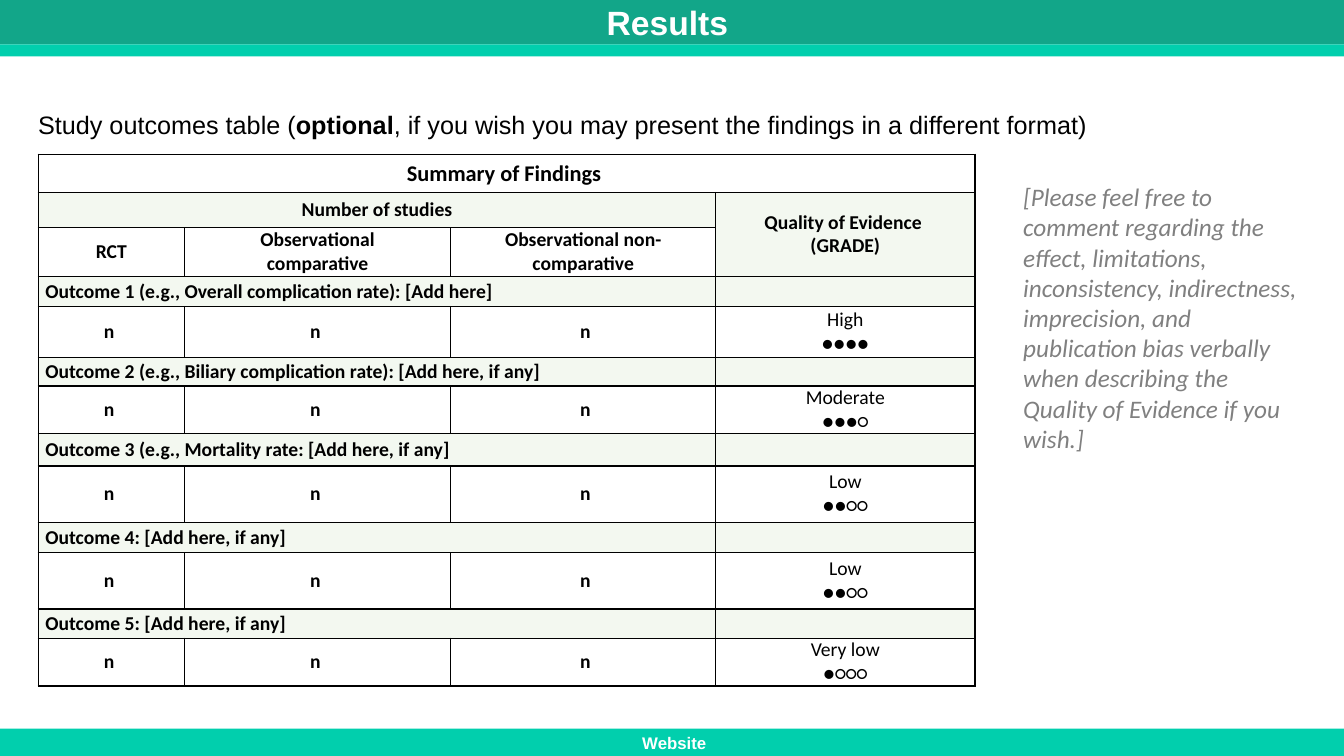
from lxml import etree
from pptx import Presentation, util as u
from pptx.dml.color import RGBColor
from pptx.enum import shapes, text
from pptx.oxml.ns import qn

COLORS = {"black": "000000", "white": "FFFFFF", "gray": "808080",
          "green": "12A689", "mint": "01CFAD", "band": "C5E0B4"}
CENTER = text.PP_ALIGN.CENTER
LEFT = text.PP_ALIGN.LEFT
MIDDLE = text.MSO_ANCHOR.MIDDLE

COLUMN_WIDTHS = [1.45, 2.64, 2.63, 2.57]
ROW_HEIGHTS = [0.38, 0.35, 0.48, 0.3, 0.51, 0.28, 0.47, 0.32, 0.56, 0.3, 0.56, 0.29, 0.47]
OUTCOMES = [
    ("Outcome 1 (e.g., Overall complication rate): [Add here]", "High", 4),
    ("Outcome 2 (e.g., Biliary complication rate): [Add here, if any]", "Moderate", 3),
    ("Outcome 3 (e.g., Mortality rate: [Add here, if any]", "Low", 2),
    ("Outcome 4: [Add here, if any]", "Low", 2),
    ("Outcome 5: [Add here, if any]", "Very low", 1),
]
STUDY_COUNTS = ["n ", "n ", " n"]
COMMENT = ("[Please feel free to comment regarding the effect, limitations, "
           "inconsistency, indirectness, imprecision, and publication bias verbally "
           "when describing the Quality of Evidence if you wish.]")


def write(frame, runs, size=18, font="Arial", color="black", bold=False,
          italic=False, align=LEFT):
    """Write a string, or a list of (string, bold) runs, into a text frame."""
    if isinstance(runs, str):
        runs = [(runs, bold)]
    paragraph = frame.paragraphs[0]
    paragraph.alignment = align
    for words, heavy in runs:
        for number, line in enumerate(words.split("\n")):
            if number:
                paragraph = frame.add_paragraph()
                paragraph.alignment = align
            run = paragraph.add_run()
            run.text = line
            run.font.size = u.Pt(size)
            run.font.name = font
            run.font.bold = heavy
            run.font.italic = italic
            run.font.color.rgb = RGBColor.from_string(COLORS[color])


class ResultsSlide:
    """Hold the slide and draw its elements in one style."""

    def __init__(self, deck):
        self.slide = deck.slides.add_slide(deck.slide_layouts[5])

    def paint(self, shape, color):
        """Fill a shape without an outline."""
        shape.fill.solid()
        shape.fill.fore_color.rgb = RGBColor.from_string(COLORS[color])
        shape.line.fill.background()

    def title(self, words, height):
        """Place the title as a filled bar across the top."""
        heading = self.slide.shapes.title
        heading.left, heading.top = u.Inches(0), u.Inches(0)
        heading.width, heading.height = u.Inches(13.33), u.Inches(height)
        self.paint(heading, "green")
        heading.text_frame.auto_size = text.MSO_AUTO_SIZE.NONE
        heading.text_frame.vertical_anchor = MIDDLE
        write(heading.text_frame, words, size=24, color="white", bold=True, align=CENTER)

    def bar(self, top, height, words=""):
        """Draw a mint bar across the slide, with an optional label."""
        stripe = self.slide.shapes.add_shape(
            shapes.MSO_SHAPE.RECTANGLE, u.Inches(0), u.Inches(top),
            u.Inches(13.33), u.Inches(height))
        stripe.shadow.inherit = False
        self.paint(stripe, "mint")
        if words:
            stripe.text_frame.vertical_anchor = MIDDLE
            write(stripe.text_frame, words, size=12, color="white", bold=True, align=CENTER)

    def note(self, left, top, width, height, runs, wrap=True, **style):
        """Add a text box."""
        box = self.slide.shapes.add_textbox(*map(u.Inches, (left, top, width, height)))
        box.text_frame.word_wrap = wrap
        write(box.text_frame, runs, **style)

    def grid(self, left, top):
        """Add a plain table with thin black borders."""
        findings = self.slide.shapes.add_table(
            len(ROW_HEIGHTS), len(COLUMN_WIDTHS), u.Inches(left), u.Inches(top),
            u.Inches(sum(COLUMN_WIDTHS)), u.Inches(sum(ROW_HEIGHTS))).table
        findings.first_row = findings.horz_banding = False
        for column, width in zip(findings.columns, COLUMN_WIDTHS):
            column.width = u.Inches(width)
        for row, height in zip(findings.rows, ROW_HEIGHTS):
            row.height = u.Inches(height)
        for cell in findings.iter_cells():
            self.border(cell)
            cell.fill.background()
            cell.vertical_anchor = MIDDLE
            cell.margin_left = cell.margin_right = u.Inches(0.07)
            cell.margin_top = cell.margin_bottom = 0
            ending = etree.SubElement(cell.text_frame.paragraphs[0]._p, qn("a:endParaRPr"))
            ending.set("sz", "1400")
        return findings

    def border(self, cell):
        """Outline a cell on all four sides."""
        properties = cell._tc.get_or_add_tcPr()
        for side in ("a:lnL", "a:lnR", "a:lnT", "a:lnB"):
            line = etree.SubElement(properties, qn(side), w=str(u.Pt(1)))
            fill = etree.SubElement(line, qn("a:solidFill"))
            etree.SubElement(fill, qn("a:srgbClr"), val=COLORS["black"])

    def fill_cell(self, cell, words="", band=False, size=14, bold=True, align=CENTER):
        """Write a cell and tint it when it belongs to a band."""
        if band:
            cell.fill.solid()
            cell.fill.fore_color.rgb = RGBColor.from_string(COLORS["band"])
            tint = cell._tc.tcPr.find(qn("a:solidFill"))[0]
            etree.SubElement(tint, qn("a:alpha"), val="20000")
        if words:
            write(cell.text_frame, words, size=size, font="Calibri", bold=bold, align=align)

    def findings(self, left, top):
        """Build the summary of findings."""
        table = self.grid(left, top)
        cell = table.cell
        cell(0, 0).merge(cell(0, 3))
        cell(1, 0).merge(cell(1, 2))
        cell(1, 3).merge(cell(2, 3))
        self.fill_cell(cell(0, 0), "Summary of Findings ", size=16)
        self.fill_cell(cell(1, 0), "Number of studies", band=True)
        self.fill_cell(cell(1, 3), "Quality of Evidence \n(GRADE)", band=True)
        designs = ["RCT", "Observational\ncomparative", "Observational non-comparative"]
        for column, design in enumerate(designs):
            self.fill_cell(cell(2, column), design)
        for index, (outcome, quality, grade) in enumerate(OUTCOMES):
            row = 3 + 2 * index
            cell(row, 0).merge(cell(row, 2))
            self.fill_cell(cell(row, 0), outcome, band=True, align=LEFT)
            self.fill_cell(cell(row, 3), band=True)
            for column, count in enumerate(STUDY_COUNTS):
                self.fill_cell(cell(row + 1, column), count)
            dots = "●" * grade + "○" * (4 - grade)
            self.fill_cell(cell(row + 1, 3), f"{quality}\n{dots}", bold=False)


def main():
    """Build and save the results slide."""
    deck = Presentation()
    deck.slide_width, deck.slide_height = u.Inches(13.33), u.Inches(7.5)
    results = ResultsSlide(deck)
    results.findings(0.38, 1.53)
    results.note(0.28, 1.04, 10.7, 0.4, [
        ("Study outcomes table (", False), ("optional", True),
        (", if you wish you may present the findings in a different format)", False),
    ], wrap=False)
    results.note(10.05, 1.75, 2.91, 3.13, COMMENT, font="Calibri", color="gray", italic=True)
    results.title("Results ", 0.44)
    results.bar(0.44, 0.12)
    results.bar(7.23, 0.27, " Website")
    deck.save("out.pptx")


if __name__ == "__main__":
    main()
